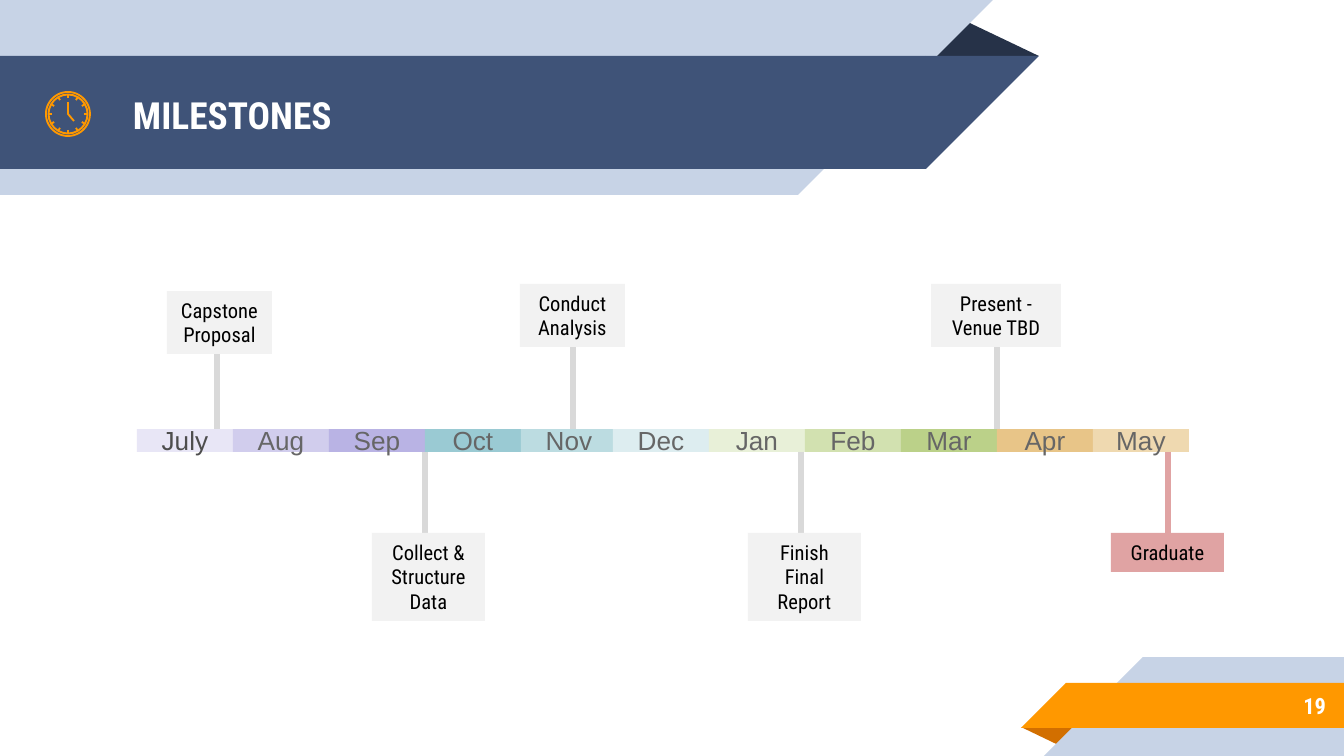
"""Builds the project milestones timeline slide."""
import math
from dataclasses import dataclass
from typing import Optional

from lxml import etree
from pptx import Presentation
from pptx import util as u
from pptx.dml.color import RGBColor
from pptx.enum import shapes, text
from pptx.oxml import ns

PX = 914400 / 134.4
COLORS = {
    "pale": "C7D3E6", "navy": "3F5378", "navy_fold": "263248",
    "orange": "FF9800", "orange_fold": "D26F00", "white": "FFFFFF",
    "black": "000000", "first_month": "4D4D4D", "month": "666666",
    "stem": "D9D9D9", "callout": "F2F2F2", "finish": "E0A3A3",
}
KIND = shapes.MSO_SHAPE
HEADING_FONT = "Roboto Condensed"
BAR_TOP, BAR_HEIGHT = 429, 23
MONTH_LEFT, MONTH_WIDTH, DEC_OVERLAP = 137, 96, 4


@dataclass(frozen=True)
class Box:
    left: int
    top: int
    width: int
    height: int


@dataclass(frozen=True)
class Band:
    kind: shapes.MSO_SHAPE
    box: Box
    color: str
    flip: str = ""
    rotation: int = 0


@dataclass(frozen=True)
class Style:
    size: int
    color: str
    font: str = HEADING_FONT
    bold: bool = False
    align: text.PP_ALIGN = text.PP_ALIGN.CENTER
    anchor: text.MSO_ANCHOR = text.MSO_ANCHOR.MIDDLE


@dataclass(frozen=True)
class Month:
    name: str
    fill: str
    color: str = "month"


@dataclass(frozen=True)
class Callout:
    lines: tuple
    box: Box
    stem_x: int
    fill: str = "callout"
    stem: str = "stem"


BANDS = (
    Band(KIND.ISOSCELES_TRIANGLE, Box(925, 19, 114, 37), "navy_fold"),
    Band(KIND.RECTANGLE, Box(0, 0, 798, 195), "pale"),
    Band(KIND.RIGHT_TRIANGLE, Box(798, 0, 195, 195), "pale", "flipV"),
    Band(KIND.RECTANGLE, Box(0, 56, 926, 113), "navy"),
    Band(KIND.RIGHT_TRIANGLE, Box(926, 56, 113, 113), "navy", "flipV"),
    Band(KIND.ISOSCELES_TRIANGLE, Box(1021, 727, 58, 19), "orange_fold", rotation=180),
    Band(KIND.RECTANGLE, Box(1143, 657, 201, 99), "pale"),
    Band(KIND.RIGHT_TRIANGLE, Box(1044, 657, 99, 99), "pale", "flipH"),
    Band(KIND.RECTANGLE, Box(1066, 683, 278, 45), "orange"),
    Band(KIND.RIGHT_TRIANGLE, Box(1021, 683, 45, 45), "orange", "flipH"),
)
MONTHS = (
    Month("July", "E8E6F6", "first_month"), Month("Aug", "D1CDED"),
    Month("Sep", "B9B3E4"), Month("Oct", "9ACAD3"), Month("Nov", "BCDCE1"),
    Month("Dec", "DDEDF0"), Month("Jan", "E8F0D8"), Month("Feb", "D2E1B0"),
    Month("Mar", "BBD189"), Month("Apr", "E8C588"), Month("May", "EFD9B0"),
)
CALLOUTS = (
    Callout(("Capstone Proposal",), Box(167, 291, 105, 63), 217),
    Callout(("Collect & Structure Data",), Box(372, 533, 113, 88), 425),
    Callout(("Conduct Analysis",), Box(520, 284, 105, 63), 573),
    Callout(("Finish Final Report",), Box(748, 533, 113, 88), 801),
    Callout(("Present -", "Venue TBD"), Box(931, 284, 130, 63), 997),
    Callout(("Graduate",), Box(1111, 533, 113, 39), 1168, "finish", "finish"),
)


def emu(px: float) -> u.Emu:
    return u.Emu(round(px * PX))


def rgb(color: str) -> RGBColor:
    return RGBColor.from_string(COLORS.get(color, color))


def place(box: Box) -> tuple:
    return emu(box.left), emu(box.top), emu(box.width), emu(box.height)


def add_filled(slide, kind: shapes.MSO_SHAPE, box: Box, color: str):
    shape = slide.shapes.add_shape(kind, *place(box))
    shape.shadow.inherit = False
    shape.fill.solid()
    shape.fill.fore_color.rgb = rgb(color)
    shape.line.fill.background()
    return shape


def outline(shape) -> None:
    shape.shadow.inherit = False
    shape.fill.background()
    shape.line.color.rgb = rgb("orange")
    shape.line.width = u.Pt(1)


def add_line(slide, start: tuple, end: tuple, color: str, width: float) -> None:
    line = slide.shapes.add_connector(
        shapes.MSO_CONNECTOR.STRAIGHT, *map(emu, start + end))
    line.line.color.rgb = rgb(color)
    line.line.width = u.Pt(width)
    etree.SubElement(line.element.spPr, ns.qn("a:effectLst"))


def write(shape, lines: tuple, style: Style, inset: Optional[int] = None) -> None:
    frame = shape.text_frame
    frame.word_wrap = True
    frame.vertical_anchor = style.anchor
    if inset is not None:
        frame.margin_left = frame.margin_right = emu(inset)
        frame.margin_top = frame.margin_bottom = emu(inset)
    for index, line in enumerate(lines):
        paragraph = frame.add_paragraph() if index else frame.paragraphs[0]
        paragraph.alignment = style.align
        run = paragraph.add_run()
        run.text = line
        run.font.name = style.font
        run.font.size = u.Pt(style.size)
        run.font.bold = style.bold
        run.font.color.rgb = rgb(style.color)


def add_band(slide, band: Band) -> None:
    shape = add_filled(slide, band.kind, band.box, band.color)
    shape.rotation = band.rotation
    if band.flip:
        shape.element.spPr.xfrm.set(band.flip, "1")
    if band.kind == KIND.ISOSCELES_TRIANGLE:
        shape.adjustments[0] = 0.32


def add_label(slide, box: Box, words: str, style: Style) -> None:
    write(slide.shapes.add_textbox(*place(box)), (words,), style, inset=13)


def add_clock(slide, x: int, y: int) -> None:
    for size in (44, 39):
        corner = emu(x - size / 2), emu(y - size / 2)
        outline(slide.shapes.add_shape(KIND.OVAL, *corner, emu(size), emu(size)))
    hands = slide.shapes.build_freeform(x, y - 12, scale=PX)
    hands.add_line_segments([(x, y), (x + 6, y + 7)], close=False)
    outline(hands.convert_to_shape())
    for hour in range(12):
        angle = math.radians(30 * hour)
        inner, outer = ((x + r * math.sin(angle), y - r * math.cos(angle))
                        for r in (16, 19))
        add_line(slide, inner, outer, "orange", 1)


def add_month(slide, index: int, month: Month) -> None:
    shift = DEC_OVERLAP if index >= 5 else 0
    box = Box(MONTH_LEFT + MONTH_WIDTH * index - shift, BAR_TOP, MONTH_WIDTH, BAR_HEIGHT)
    cell = add_filled(slide, KIND.RECTANGLE, box, month.fill)
    write(cell, (month.name,), Style(14, month.color, "Arial"))


def add_callout(slide, callout: Callout) -> None:
    box = callout.box
    if box.top < BAR_TOP:
        ends = box.top + box.height, BAR_TOP
    else:
        ends = BAR_TOP + BAR_HEIGHT, box.top
    add_line(slide, (callout.stem_x, ends[0]), (callout.stem_x, ends[1]),
             callout.stem, 2.75)
    note = add_filled(slide, KIND.RECTANGLE, box, callout.fill)
    write(note, callout.lines, Style(11, "black", anchor=text.MSO_ANCHOR.TOP))
    note.text_frame.auto_size = text.MSO_AUTO_SIZE.SHAPE_TO_FIT_TEXT


def main() -> None:
    deck = Presentation()
    deck.slide_width, deck.slide_height = emu(1344), emu(756)
    slide = deck.slides.add_slide(deck.slide_layouts[6])
    for band in BANDS:
        add_band(slide, band)
    add_label(slide, Box(120, 58, 808, 113), "MILESTONES",
              Style(20, "white", bold=True, align=text.PP_ALIGN.LEFT))
    add_label(slide, Box(1120, 682, 219, 47), "19",
              Style(12, "white", bold=True, align=text.PP_ALIGN.RIGHT))
    add_clock(slide, 68, 114)
    for index, month in enumerate(MONTHS):
        add_month(slide, index, month)
    for callout in CALLOUTS:
        add_callout(slide, callout)
    deck.save("out.pptx")


if __name__ == "__main__":
    main()
